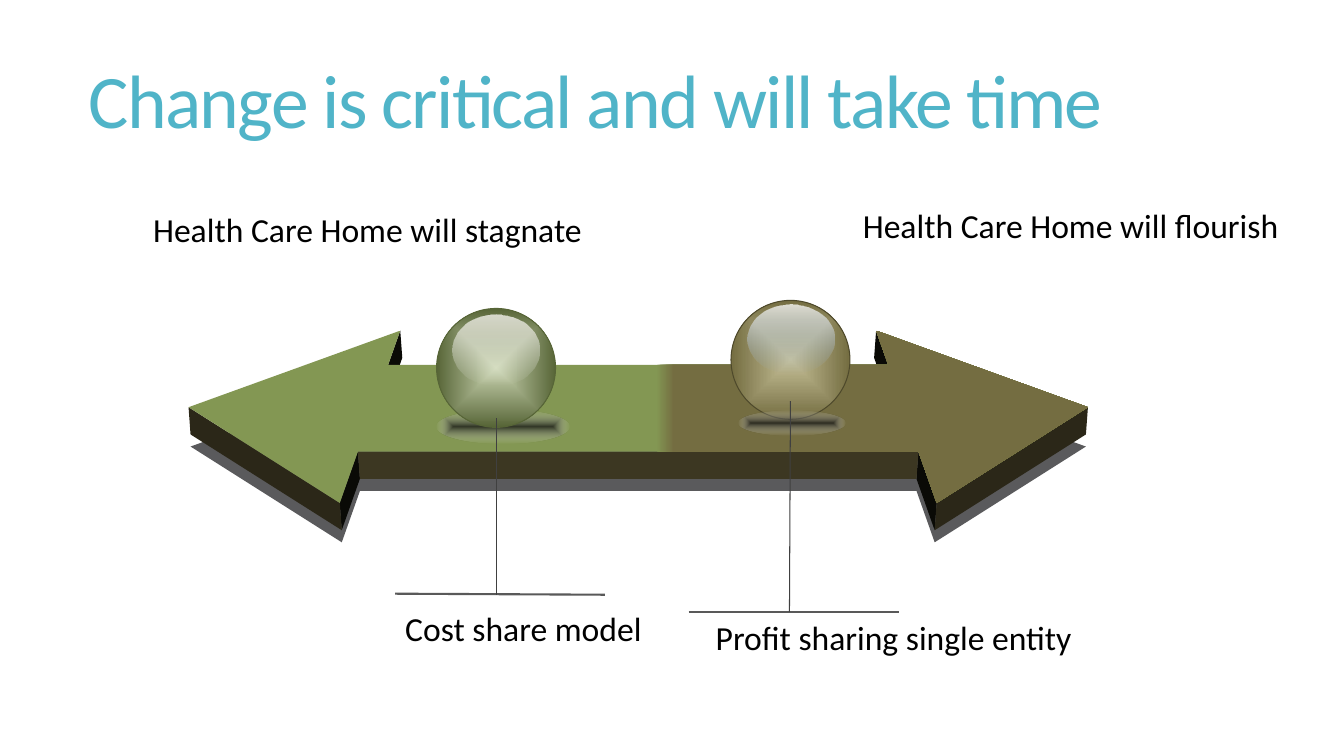
import pptx
import pptx.dml.color
import pptx.enum.shapes
import pptx.enum.text
import pptx.oxml
import pptx.oxml.ns
import pptx.util
from pptx.util import Inches

THEME = {
    "font": "Calibri", "title_size": 54, "label_size": 24,
    "title": "50B4C8", "text": "000000",
    "stagnate": "839753", "flourish": "746D41",
    "front": "3C3722", "wing": "2B2718", "notch": "0A0A06", "cast": "5A5A5C",
    "base_line": "595959", "stem": "404040",
}

TITLE = ("Change is critical and will take time", (0.78, 0.14, 11.78, 1.81))
LABELS = [
    ("Health Care Home will stagnate", (1.42, 2.02, 4.65, 0.5)),
    ("Health Care Home will flourish", (8.46, 1.98, 4.36, 0.5)),
    ("Profit sharing single entity", (7, 6.07, 3.77, 0.5)),
    ("Cost share model", (3.92, 5.98, 2.57, 0.5)),
]

# Left half of the arrow's top face; the right half mirrors it.
ARROW_CENTRE = 6.33
ARROW_LEFT = [(3.55, 4.48), (3.37, 4.99), (1.87, 4.04), (3.97, 3.28), (3.85, 3.62)]
ARROW_DEPTH, CAST_DEPTH, TAPER = 0.27, 0.39, 0.02
SIDE_COLOURS = ["notch", "wing", None, "notch"]  # one per edge of the left half

# Gradient stops are (position, colour, opacity), in percent.
GROUND_SHADOW = [(0, "171717", 76), (100, "FFFFFF", 0)]
MARKERS = [
    {   # profit sharing
        "ellipses": [
            ((7.25, 2.98, 1.18, 1.18), [(0, "C5BF97", 100), (100, "746D41", 100)], "radial", "4E492B"),
            ((7.41, 3.02, 0.87, 0.69), [(0, "FFFFFF", 77), (100, "8EB4E3", 0)], "down", None),
            ((7.33, 4.07, 1.06, 0.25), GROUND_SHADOW, "radial", None),
        ],
        "base": (6.83, 6.07, 8.92, 6.07), "stem": (7.84, 3.98, 7.83, 6.07),
    },
    {   # cost share
        "ellipses": [
            ((4.33, 4.06, 1.32, 0.34), GROUND_SHADOW, "radial", None),
            ((4.33, 3.06, 1.18, 1.18), [(0, "CBD5B2", 100), (100, "576537", 100)], "radial", "576537"),
            ((4.49, 3.12, 0.86, 0.7), [(0, "FFFCF9", 77), (100, "FFFFFF", 0)], "down", None),
        ],
        "base": (3.92, 5.89, 6, 5.9), "stem": (4.92, 4.15, 4.92, 5.9),
    },
]

DIRECTIONS = {
    "right": '<a:lin ang="0" scaled="0"/>',
    "down": '<a:lin ang="5400000" scaled="0"/>',
    "radial": '<a:path path="shape"><a:fillToRect l="50000" t="50000" r="50000" b="50000"/></a:path>',
}


def rgb(value):
    return pptx.dml.color.RGBColor.from_string(value)


def fill_gradient(shape, stops, direction):
    stop_xml = "".join(
        f'<a:gs pos="{position * 1000}"><a:srgbClr val="{colour}">'
        f'<a:alpha val="{opacity * 1000}"/></a:srgbClr></a:gs>'
        for position, colour, opacity in stops)
    gradient = pptx.oxml.parse_xml(
        f'<a:gradFill {pptx.oxml.ns.nsdecls("a")} rotWithShape="1">'
        f'<a:gsLst>{stop_xml}</a:gsLst>{DIRECTIONS[direction]}</a:gradFill>')
    shape.fill.background()
    properties = shape._element.spPr
    properties.replace(properties.find(pptx.oxml.ns.qn("a:noFill")), gradient)


def add_text(slide, text, box, size, colour, spacing=None):
    shape = slide.shapes.add_textbox(*map(Inches, box))
    frame = shape.text_frame
    frame.word_wrap = False
    paragraph = frame.paragraphs[0]
    run = paragraph.add_run()
    run.text = text
    run.font.name = THEME["font"]
    run.font.size = pptx.util.Pt(size)
    run.font.color.rgb = rgb(colour)
    if spacing is not None:
        frame.word_wrap = True
        frame.vertical_anchor = pptx.enum.text.MSO_ANCHOR.MIDDLE
        paragraph.line_spacing = 0.85
        run._r.get_or_add_rPr().set("spc", str(spacing))


def add_polygon(slide, points, colour=None):
    corners = [(Inches(x), Inches(y)) for x, y in points]
    builder = slide.shapes.build_freeform(*corners[0], scale=1.0)
    builder.add_line_segments(corners[1:], close=True)
    shape = builder.convert_to_shape()
    shape.shadow.inherit = False
    shape.line.fill.background()
    if colour:
        shape.fill.solid()
        shape.fill.fore_color.rgb = rgb(colour)
    return shape


def add_line(slide, ends, colour, width):
    line = slide.shapes.add_connector(
        pptx.enum.shapes.MSO_CONNECTOR.STRAIGHT, *map(Inches, ends))
    line.line.color.rgb = rgb(colour)
    line.line.width = pptx.util.Pt(width)
    line._element.spPr.append(
        pptx.oxml.parse_xml(f'<a:effectLst {pptx.oxml.ns.nsdecls("a")}/>'))


def mirror(points):
    return [(2 * ARROW_CENTRE - x, y) for x, y in points]


def lower(points, depth):
    """Drop points by depth, drawing them slightly towards the centre."""
    return [(x + (TAPER if x < ARROW_CENTRE else -TAPER), y + depth) for x, y in points]


def add_arrow(slide):
    outline = ARROW_LEFT + mirror(ARROW_LEFT)[::-1]
    add_polygon(slide, lower(outline, CAST_DEPTH), THEME["cast"])
    for half in (ARROW_LEFT, mirror(ARROW_LEFT)):
        for edge, colour in zip(zip(half, half[1:]), SIDE_COLOURS):
            if colour:
                add_polygon(slide, [*edge, *lower(edge[::-1], ARROW_DEPTH)], THEME[colour])
    front = [ARROW_LEFT[0], *mirror(ARROW_LEFT[:1])]
    add_polygon(slide, front + lower(front[::-1], ARROW_DEPTH), THEME["front"])
    top = add_polygon(slide, outline)
    fill_gradient(top, [(52, THEME["stagnate"], 100), (54, THEME["flourish"], 100)], "right")


def add_marker(slide, marker):
    for box, stops, direction, outline in marker["ellipses"]:
        ellipse = slide.shapes.add_shape(
            pptx.enum.shapes.MSO_SHAPE.OVAL, *map(Inches, box))
        ellipse.shadow.inherit = False
        fill_gradient(ellipse, stops, direction)
        if outline:
            ellipse.line.color.rgb = rgb(outline)
            ellipse.line.width = pptx.util.Pt(0.75)
        else:
            ellipse.line.fill.background()
    add_line(slide, marker["base"], THEME["base_line"], 1.5)
    add_line(slide, marker["stem"], THEME["stem"], 0.75)


def main():
    presentation = pptx.Presentation()
    presentation.slide_width = Inches(13.33)
    presentation.slide_height = Inches(7.5)
    slide = presentation.slides.add_slide(presentation.slide_layouts[6])
    add_text(slide, *TITLE, THEME["title_size"], THEME["title"], spacing=-120)
    add_arrow(slide)
    for marker in MARKERS:
        add_marker(slide, marker)
    for text, box in LABELS:
        add_text(slide, text, box, THEME["label_size"], THEME["text"])
    presentation.save("out.pptx")


if __name__ == "__main__":
    main()
